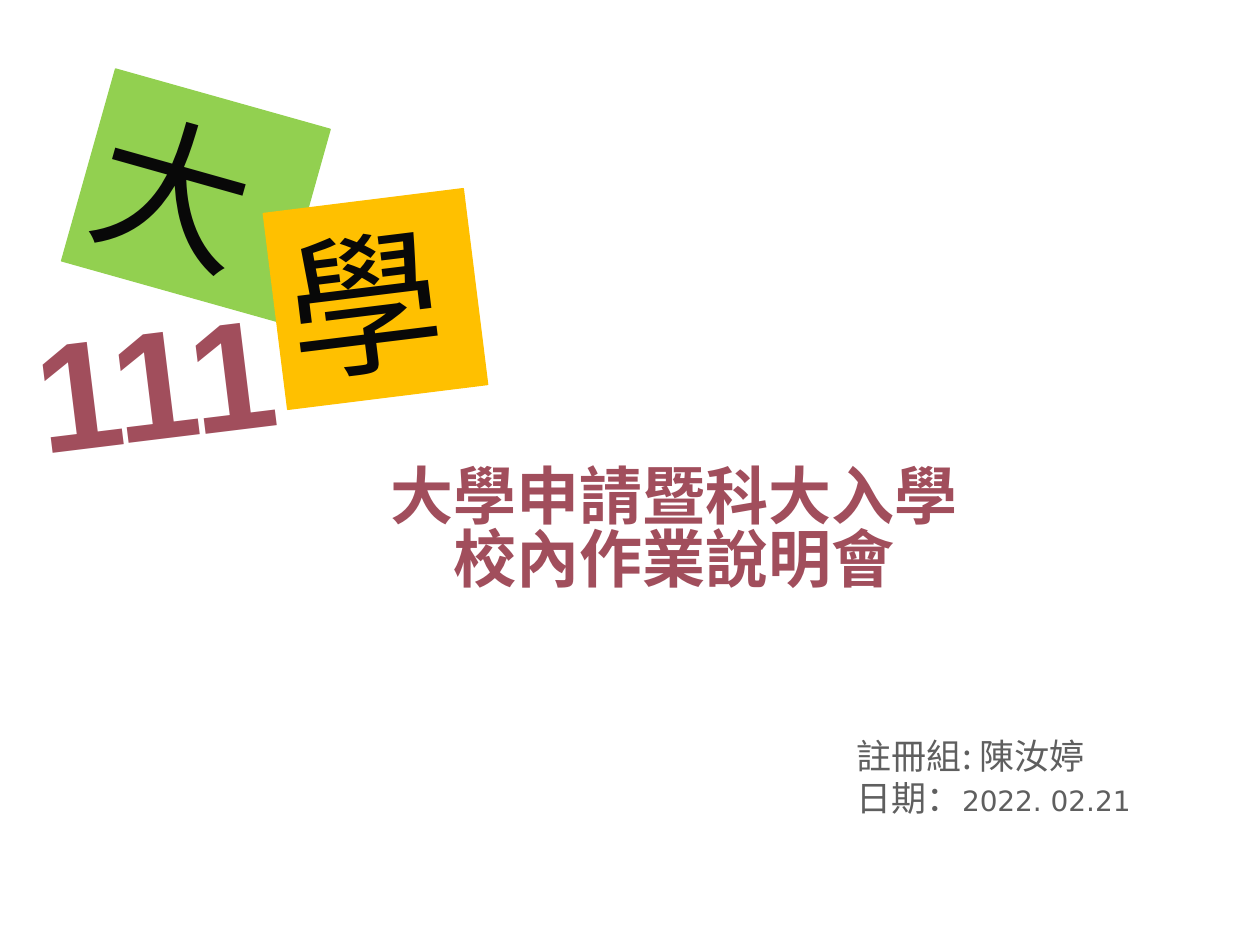
import pptx
import pptx.util
import pptx.dml.color
import pptx.enum.shapes
import pptx.enum.text
import pptx.oxml.ns
import lxml.etree

ANCHOR = pptx.enum.text.MSO_ANCHOR
ALIGN = pptx.enum.text.PP_ALIGN
CJK = "Noto Sans CJK JP"
WINE = "A14E5C"

prs = pptx.Presentation()
prs.slide_width = pptx.util.Inches(10)
prs.slide_height = pptx.util.Inches(7.5)
W, H = prs.slide_width, prs.slide_height
s = prs.slides.add_slide(prs.slide_layouts[0])


def place(sp, x, y, w, h, anchor, wrap):
    sp.left, sp.top = int(W * x), int(H * y)
    sp.width, sp.height = int(W * w), int(H * h)
    tf = sp.text_frame
    tf.auto_size = pptx.enum.text.MSO_AUTO_SIZE.NONE
    tf.vertical_anchor = anchor
    tf.word_wrap = wrap
    return tf


def style(r, size, color, font=CJK, bold=False):
    r.font.size = pptx.util.Pt(size)
    r.font.bold = bold
    r.font.color.rgb = pptx.dml.color.RGBColor.from_string(color)
    r.font.name = font
    ea = lxml.etree.SubElement(r.font._element, pptx.oxml.ns.qn("a:ea"))
    ea.set("typeface", font)


title = s.shapes.title
tf = place(title, 0.29, 0.49, 0.49, 0.27, ANCHOR.TOP, False)
tf.text = "大學申請暨科大入學\n校內作業說明會"
for p in tf.paragraphs:
    p.alignment = ALIGN.CENTER
    p.line_spacing = 0.83
    style(p.runs[0], 36, WINE, bold=True)

tf = place(s.placeholders[1], 0.67, 0.73, 0.29, 0.19, ANCHOR.MIDDLE, True)
tf.text = "註冊組: 陳汝婷\n日期："
for i, p in enumerate(tf.paragraphs):
    p.alignment = ALIGN.LEFT
    p.line_spacing = 0.83
    p.space_before = pptx.util.Pt(4 * i)
    pPr = p._p.get_or_add_pPr()
    pPr.set("marL", str(pptx.util.Inches(0.38)))
    pPr.set("indent", str(pptx.util.Inches(-0.38)))
    style(p.runs[0], 20, "5F5F5F")
r = tf.paragraphs[1].add_run()
r.text = "2022. 02.21"
style(r, 16, "5F5F5F", "DejaVu Sans")

group = s.shapes.add_group_shape()
tiles = [
    ("大", "92D050", 0.067, 0.101, 0.177, 0.211, 15.7),
    ("學", "FFC000", 0.218, 0.212, 0.16, 0.209, -7.1),
]
for text, color, x, y, w, h, angle in tiles:
    sp = group.shapes.add_shape(pptx.enum.shapes.MSO_SHAPE.RECTANGLE, 0, 0, 0, 0)
    tf = place(sp, x, y, w, h, ANCHOR.MIDDLE, True)
    sp.rotation = angle
    sp.shadow.inherit = False
    rgb = pptx.dml.color.RGBColor.from_string(color)
    sp.fill.solid()
    sp.fill.fore_color.rgb = rgb
    sp.line.color.rgb = rgb
    sp.line.width = pptx.util.Pt(0.75)
    tf.text = text
    p = tf.paragraphs[0]
    p.alignment = ALIGN.LEFT
    style(p.runs[0], 88, "080808")

year = s.shapes.add_textbox(0, 0, 0, 0)
tf = place(year, 0.012, 0.287, 0.22, 0.211, ANCHOR.BOTTOM, False)
tf.margin_bottom = 0
year.rotation = -7.1
tf.text = "111"
p = tf.paragraphs[0]
p.alignment = ALIGN.CENTER
style(p.runs[0], 88, WINE, "Arial", True)

prs.save("out.pptx")
